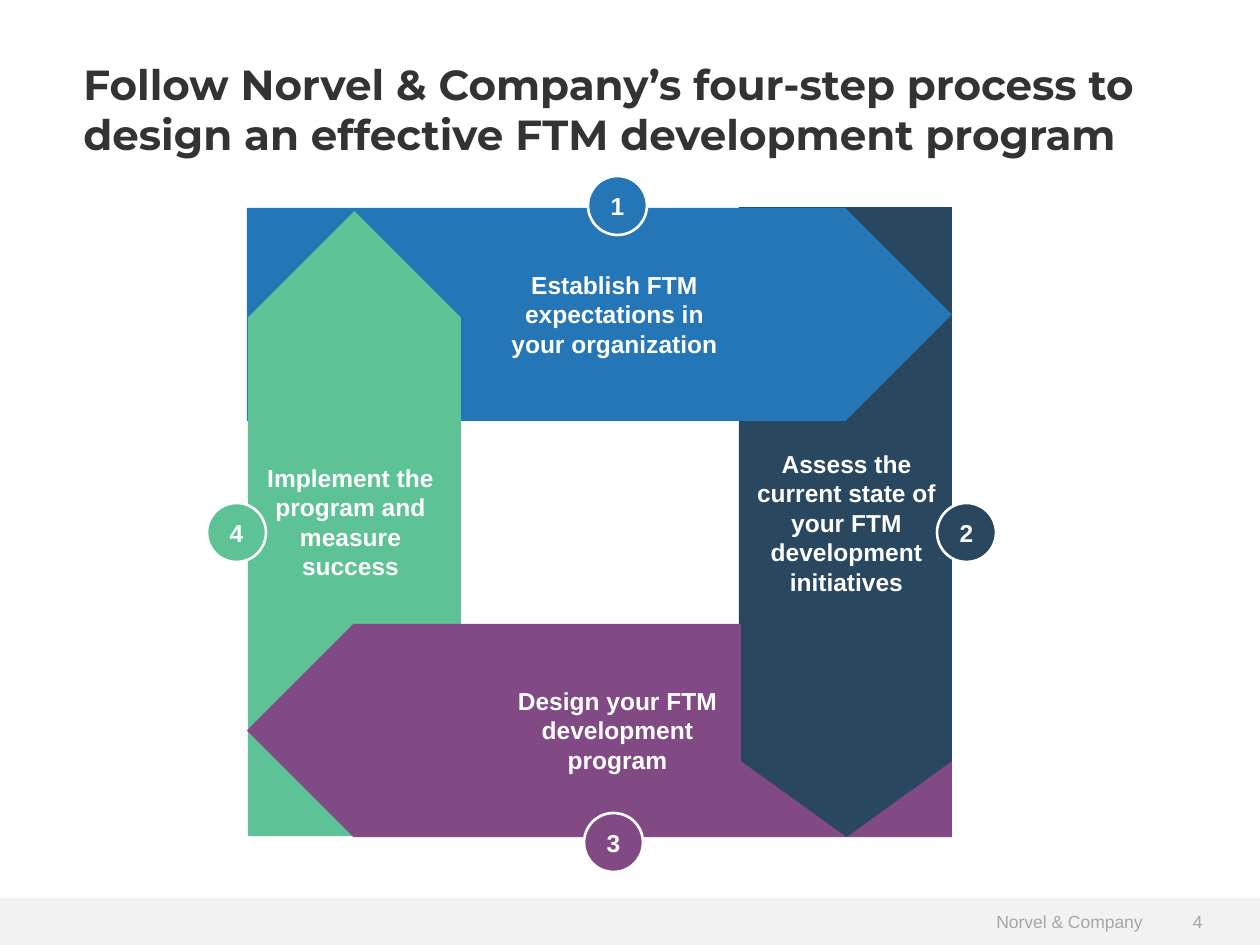
from pptx import Presentation
from pptx.dml.color import RGBColor
from pptx.enum.shapes import MSO_SHAPE
from pptx.enum.text import MSO_ANCHOR, PP_ALIGN
from pptx.util import Emu, Pt

PX = 914400 / 126
BLUE = RGBColor(0x25, 0x76, 0xB7)
NAVY = RGBColor(0x29, 0x47, 0x5F)
PURPLE = RGBColor(0x82, 0x4A, 0x85)
GREEN = RGBColor(0x5D, 0xC2, 0x95)
WHITE = RGBColor(0xFF, 0xFF, 0xFF)
CHARCOAL = RGBColor(0x33, 0x33, 0x33)
PALE_GREY = RGBColor(0xF2, 0xF2, 0xF2)
MID_GREY = RGBColor(0xA6, 0xA6, 0xA6)

TITLE = "Follow Norvel & Company’s four-step process to design an effective FTM development program"
COMPANY = "Norvel & Company"
PAGE = "4"
BADGE_SIZE = 59

ARROWS = [
    (NAVY, (533, 413, 625, 213), 90),
    (BLUE, (247, 208, 705, 213), 0),
    (GREEN, (42, 417, 625, 213), 270),
    (PURPLE, (247, 624, 705, 213), 180),
]
OVERLAP = [
    (MSO_SHAPE.RECTANGLE, (741, 617, 211, 144), 0),
    (MSO_SHAPE.ISOSCELES_TRIANGLE, (741, 761, 211, 76), 180),
]
STEPS = [
    ("Establish FTM expectations in your organization", (494, 263, 241, 102), BLUE, (588, 176)),
    ("Assess the current state of your FTM development initiatives", (740, 442, 213, 161), NAVY, (937, 503)),
    ("Design your FTM development program", (493, 679, 249, 102), PURPLE, (584, 813)),
    ("Implement the program and measure success", (247, 456, 207, 131), GREEN, (207, 503)),
]


def px(length):
    return Emu(round(length * PX))


def box(place):
    return [px(length) for length in place]


def write(holder, text, size, color, align=PP_ALIGN.CENTER, bold=True,
          font="Arial", anchor=MSO_ANCHOR.MIDDLE):
    frame = holder.text_frame
    frame.word_wrap = True
    frame.vertical_anchor = anchor
    paragraph = frame.paragraphs[0]
    paragraph.text = text
    paragraph.alignment = align
    paragraph.font.name = font
    paragraph.font.size = Pt(size)
    paragraph.font.bold = bold
    paragraph.font.color.rgb = color
    return frame


def add_block(slide, preset, place, color, rotation=0):
    block = slide.shapes.add_shape(preset, *box(place))
    block.shadow.inherit = False
    block.fill.solid()
    block.fill.fore_color.rgb = color
    block.line.fill.background()
    block.rotation = rotation
    return block


def add_footer(slide):
    company = add_block(slide, MSO_SHAPE.RECTANGLE, (0, 898, 1155, 47), PALE_GREY)
    write(company, COMPANY, 10, MID_GREY, PP_ALIGN.RIGHT, bold=False)
    page = add_block(slide, MSO_SHAPE.RECTANGLE, (1155, 898, 105, 47), PALE_GREY)
    write(page, PAGE, 10, MID_GREY, PP_ALIGN.LEFT, bold=False).margin_left = px(38)


def add_badge(slide, number, corner, color):
    badge = add_block(slide, MSO_SHAPE.OVAL, (*corner, BADGE_SIZE, BADGE_SIZE), color)
    badge.line.color.rgb = WHITE
    badge.line.width = Pt(1.5)
    frame = write(badge, str(number), 14, WHITE)
    frame.margin_left = frame.margin_right = 0


def main():
    deck = Presentation()
    deck.slide_width, deck.slide_height = px(1260), px(945)
    slide = deck.slides.add_slide(deck.slide_layouts[6])

    add_footer(slide)
    title = slide.shapes.add_textbox(*box((71, 52, 1155, 118)))
    write(title, TITLE, 24, CHARCOAL, PP_ALIGN.LEFT, font="Montserrat", anchor=MSO_ANCHOR.TOP)

    for color, place, rotation in ARROWS:
        add_block(slide, MSO_SHAPE.PENTAGON, place, color, rotation)
    for preset, place, rotation in OVERLAP:
        add_block(slide, preset, place, NAVY, rotation)
    for label, place, _, _ in STEPS:
        write(slide.shapes.add_textbox(*box(place)), label, 14, WHITE)
    for number, (_, _, color, corner) in enumerate(STEPS, 1):
        add_badge(slide, number, corner, color)

    deck.save("out.pptx")


if __name__ == "__main__":
    main()
